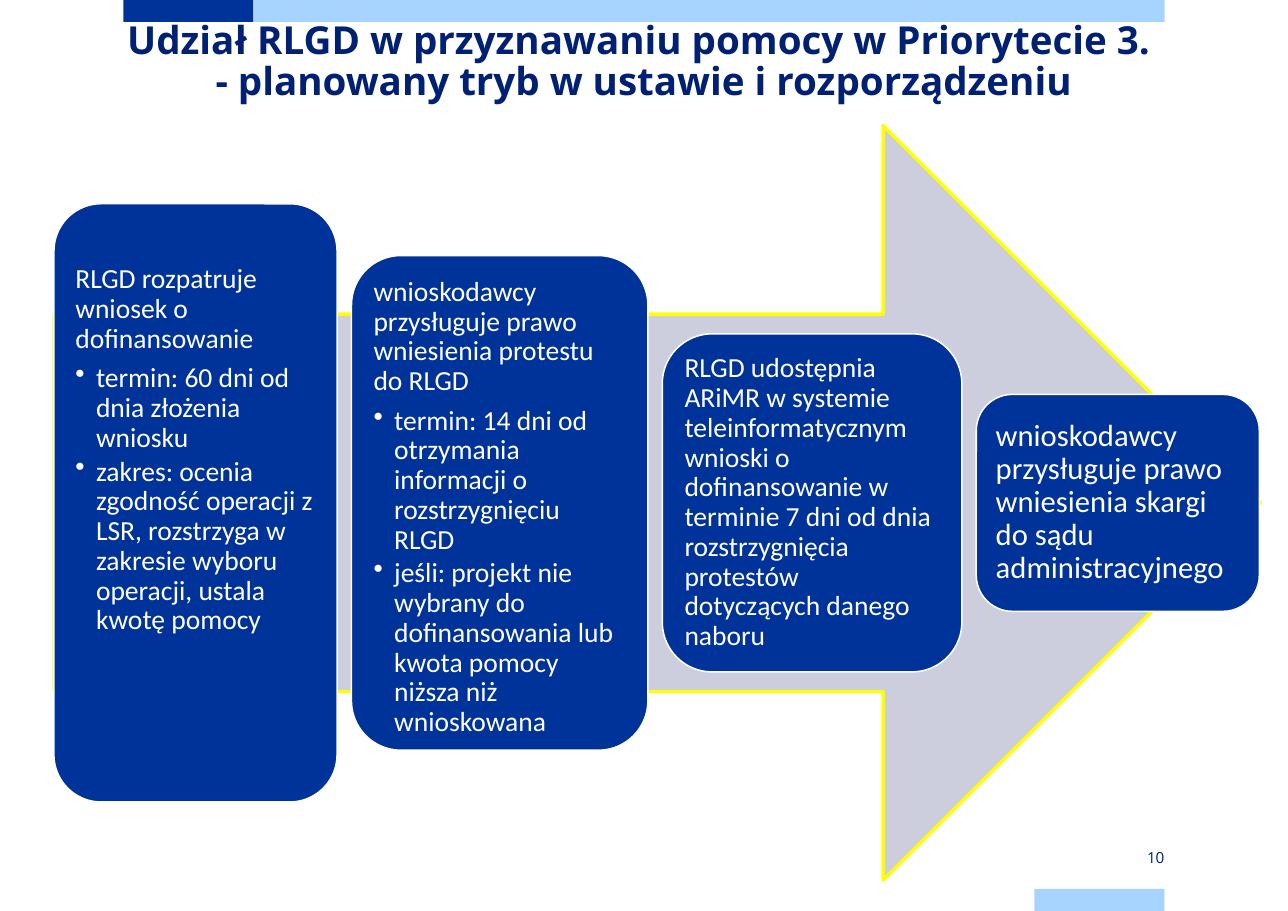
from dataclasses import dataclass

from lxml.etree import SubElement
from pptx import Presentation
from pptx.dml.color import RGBColor
from pptx.enum.shapes import MSO_SHAPE
from pptx.enum.text import MSO_ANCHOR, MSO_AUTO_SIZE, PP_ALIGN
from pptx.oxml.ns import qn
from pptx.util import Pt

TITLE = "Udział RLGD w przyznawaniu pomocy w Priorytecie 3. \v- planowany tryb w ustawie i rozporządzeniu"
PAGE = "10"
STEPS = [
    {"width": 185, "height": 391, "top_inset": 31, "anchor": MSO_ANCHOR.TOP,
     "lead": "RLGD rozpatruje wniosek o dofinansowanie",
     "bullets": ["termin: 60 dni od dnia złożenia wniosku",
                 "zakres: ocenia zgodność operacji z LSR, rozstrzyga w zakresie "
                 "wyboru operacji, ustala kwotę pomocy"]},
    {"width": 193.7, "height": 323.3, "anchor": MSO_ANCHOR.TOP,
     "lead": "wnioskodawcy przysługuje prawo wniesienia protestu do RLGD",
     "bullets": ["termin: 14 dni od otrzymania informacji o rozstrzygnięciu RLGD",
                 "jeśli: projekt nie wybrany do dofinansowania lub kwota pomocy "
                 "niższa niż wnioskowana"]},
    {"width": 195.8, "height": 221,
     "lead": "RLGD udostępnia ARiMR w systemie teleinformatycznym wnioski o dofinansowanie "
             "w terminie 7 dni od dnia rozstrzygnięcia protestów dotyczących danego naboru"},
    {"width": 185, "height": 141.8, "size": 20, "inset": 5.8,
     "lead": "wnioskodawcy przysługuje prawo wniesienia skargi do sądu administracyjnego"},
]


@dataclass(frozen=True)
class Theme:
    navy: str = "002073"
    blue: str = "003399"
    sky: str = "A6D3FF"
    arrow: str = "CCCEDE"
    yellow: str = "FFFF00"
    white: str = "FFFFFF"
    head_font: str = "Open Sans"
    body_font: str = "Calibri"
    title_size: float = 25.2
    body_size: float = 18
    page_size: float = 10


T = Theme()
W, H = 841.68, 595.44
MARGIN, UNIT, BAR = 80.64, 85.05, 14.4
ARROW_LEFT, ARROW_TOP, ARROW_W, ARROW_H = 35.3, 82.1, 788.4, 493.2
GAP = 9.4


def set_frame(tf, insets=(0, 0, 0, 0), anchor=MSO_ANCHOR.MIDDLE):
    tf.word_wrap = True
    tf.auto_size = MSO_AUTO_SIZE.NONE
    tf.vertical_anchor = anchor
    tf.margin_left, tf.margin_top, tf.margin_right, tf.margin_bottom = map(Pt, insets)


def write(tf, text, first=True, size=T.body_size, font=T.body_font, color=T.white,
          bold=False, align=PP_ALIGN.LEFT, spacing=0.9, after=0, bullet=False):
    p = tf.paragraphs[0] if first else tf.add_paragraph()
    p.text = text
    p.alignment = align
    p.line_spacing = spacing
    p.space_before = Pt(0)
    p.space_after = Pt(after)
    if bullet:
        p.level = 1
        pPr = p._p.get_or_add_pPr()
        pPr.set("marL", str(Pt(13.5)))
        pPr.set("indent", str(-Pt(13.5)))
        SubElement(pPr, qn("a:buChar"), char="•")
    for r in p.runs:
        r.font.size = Pt(size)
        r.font.name = font
        r.font.bold = bold
        r.font.color.rgb = RGBColor.from_string(color)


def add_block(s, kind, box, fill, line=None, line_width=1):
    sp = s.shapes.add_shape(kind, *map(Pt, box))
    sp.shadow.inherit = False
    sp.fill.solid()
    sp.fill.fore_color.rgb = RGBColor.from_string(fill)
    if line:
        sp.line.color.rgb = RGBColor.from_string(line)
        sp.line.width = Pt(line_width)
    else:
        sp.line.fill.background()
    return sp


def add_step(s, step, left):
    w, h = step["width"], step["height"]
    top = ARROW_TOP + (ARROW_H - h) / 2
    sp = add_block(s, MSO_SHAPE.ROUNDED_RECTANGLE, (left, top, w, h), T.blue, T.white)
    tf = sp.text_frame
    inset = step.get("inset", 5)
    set_frame(tf, (inset, step.get("top_inset", inset), inset, inset),
              step.get("anchor", MSO_ANCHOR.MIDDLE))
    size = step.get("size", T.body_size)
    write(tf, step["lead"], size=size, after=0.35 * size)
    for text in step.get("bullets", []):
        write(tf, text, first=False, size=size, after=0.15 * size, bullet=True)


def main():
    prs = Presentation()
    prs.slide_width, prs.slide_height = Pt(W), Pt(H)
    s = prs.slides.add_slide(prs.slide_layouts[5])

    for col, top, units, color in [(0, 0, 1, T.blue), (1, 0, 7, T.sky), (7, H - BAR, 1, T.sky)]:
        add_block(s, MSO_SHAPE.RECTANGLE, (MARGIN + col * UNIT, top, units * UNIT, BAR), color)

    title = s.shapes.title
    title.left, title.top, title.width, title.height = map(Pt, (MARGIN, BAR, 8 * UNIT, 85))
    set_frame(title.text_frame, anchor=MSO_ANCHOR.TOP)
    write(title.text_frame, TITLE, size=T.title_size, font=T.head_font, color=T.navy,
          bold=True, align=PP_ALIGN.CENTER, spacing=0.88)

    add_block(s, MSO_SHAPE.RIGHT_ARROW, (ARROW_LEFT, ARROW_TOP, ARROW_W, ARROW_H),
              T.arrow, T.yellow, 2.25)
    left = ARROW_LEFT
    for step in STEPS:
        add_step(s, step, left)
        left += step["width"] + GAP

    page = s.shapes.add_textbox(*map(Pt, (MARGIN + 7 * UNIT, 553, UNIT, BAR)))
    set_frame(page.text_frame)
    write(page.text_frame, PAGE, size=T.page_size, font=T.head_font, color=T.navy,
          align=PP_ALIGN.RIGHT, spacing=1.0)

    prs.save("out.pptx")


if __name__ == "__main__":
    main()
